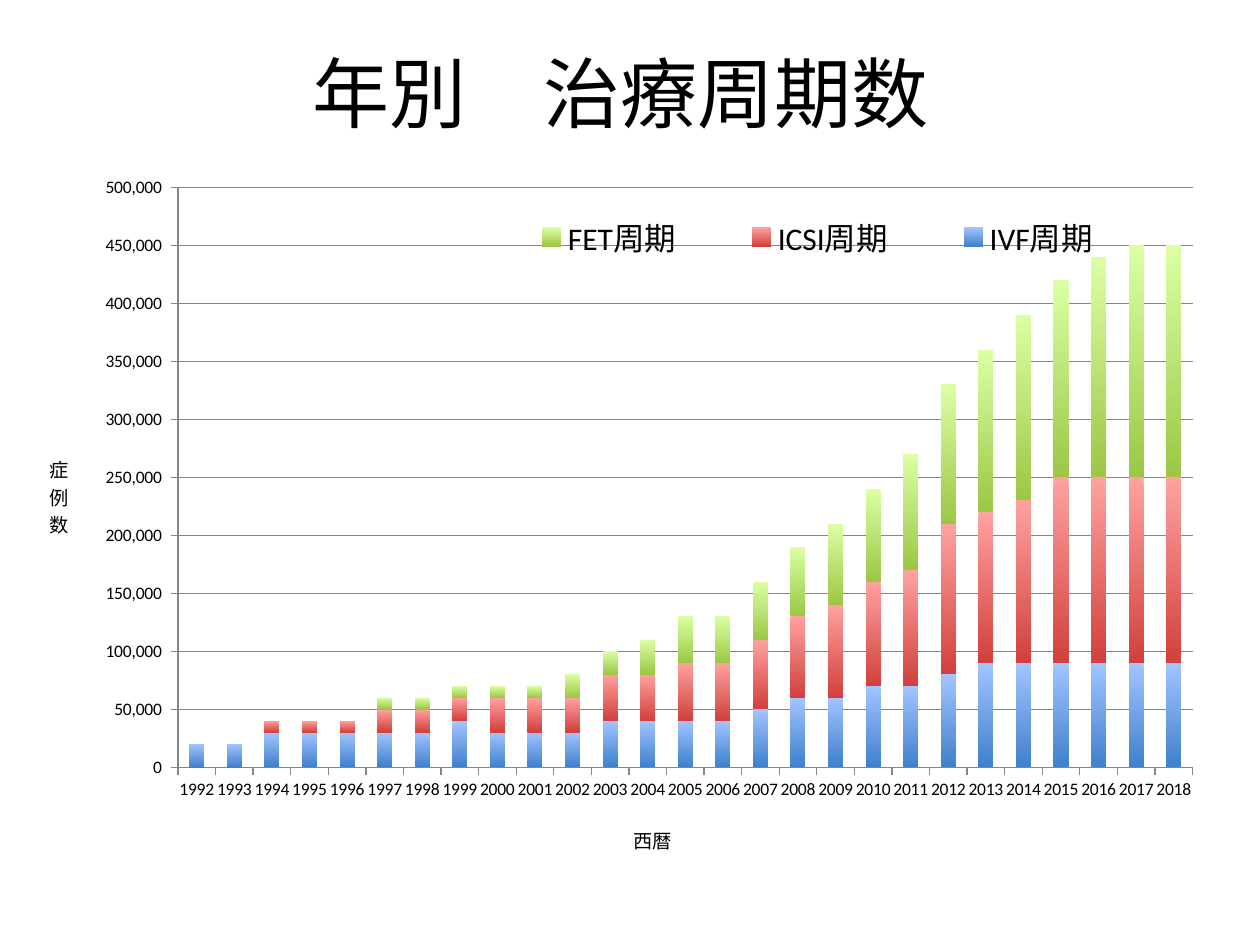
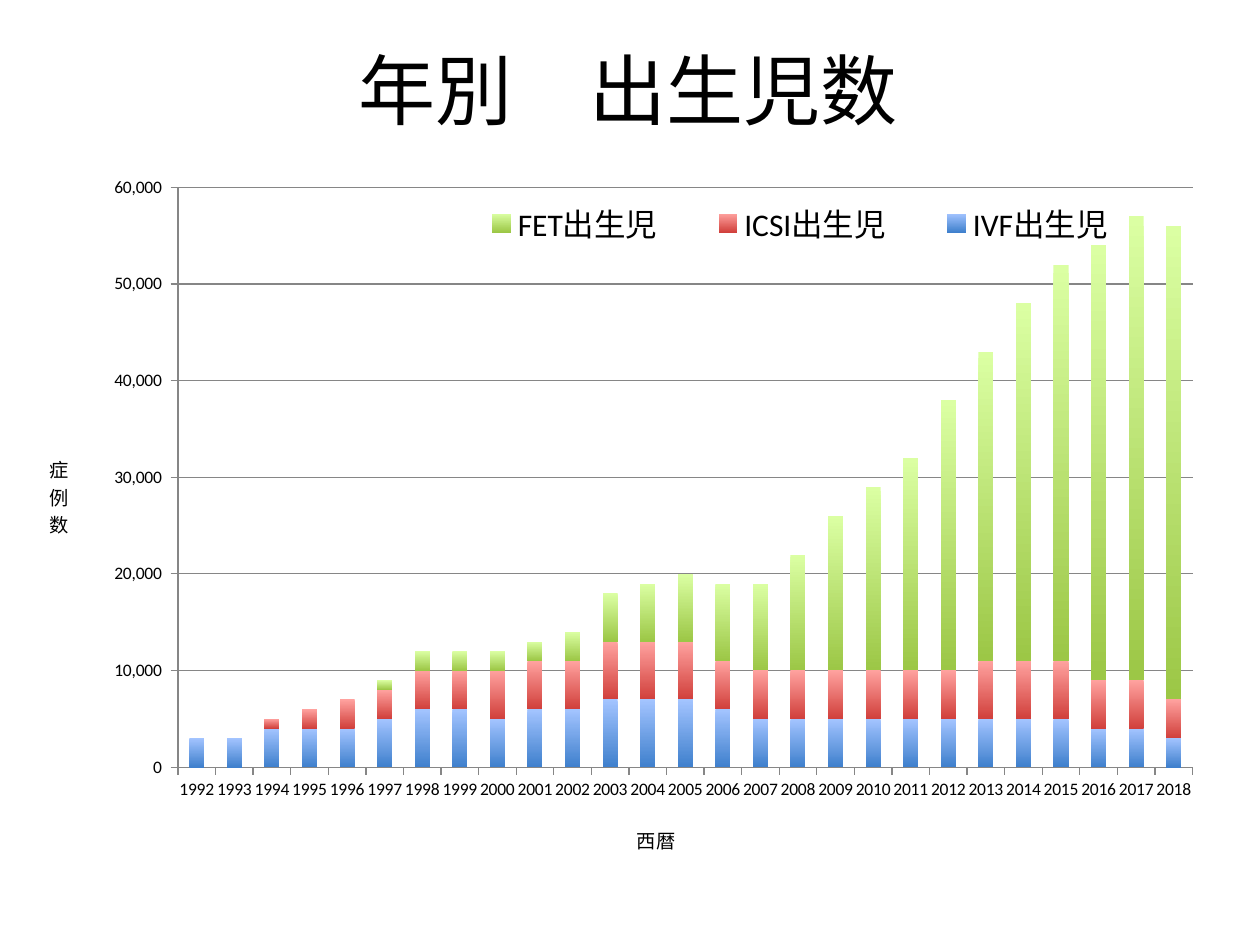
from lxml.etree import SubElement
from pptx import Presentation
from pptx.chart.data import CategoryChartData as Data
from pptx.dml.color import RGBColor
from pptx.enum.chart import XL_CHART_TYPE as Kind, XL_LEGEND_POSITION as Side, XL_TICK_MARK as Tick
from pptx.enum.text import MSO_ANCHOR as Anchor, PP_ALIGN as Align
from pptx.oxml import parse_xml
from pptx.oxml.ns import nsdecls, qn
from pptx.util import Cm, Pt

BLACK = RGBColor(0x00, 0x00, 0x00)
GRAY = RGBColor(0x86, 0x86, 0x86)
BLUE = RGBColor(0xA3, 0xC4, 0xFF), RGBColor(0x3F, 0x80, 0xCD)
RED = RGBColor(0xFF, 0xA2, 0x9F), RGBColor(0xD1, 0x40, 0x3C)
GREEN = RGBColor(0xDB, 0xFF, 0xA3), RGBColor(0x9C, 0xC7, 0x46)
SHADES = BLUE, RED, GREEN

HEAD_FONT = "Noto Sans CJK JP"
FONT = "Calibri"
FORMAT = r"#,##0_);[Red]\(#,##0\)"
YEARS = [str(year) for year in range(1992, 2019)]
PLOT = 0.116, 0.034, 0.863, 0.832

PAGES = [
    {
        "title": "年別　治療周期数",
        "spot": (1.09, 0.69),
        "unit": 10000,
        "top": 500000,
        "step": 50000,
        "legend": (0.37, 0.06, 0.58, 0.09),
        "label": 0.5,
        "series": {
            "IVF周期": [2, 2, 3, 3, 3, 3, 3, 4, 3, 3, 3, 4, 4, 4, 4, 5, 6, 6,
                      7, 7, 8, 9, 9, 9, 9, 9, 9],
            "ICSI周期": [0, 0, 1, 1, 1, 2, 2, 2, 3, 3, 3, 4, 4, 5, 5, 6, 7, 8,
                       9, 10, 13, 13, 14, 16, 16, 16, 16],
            "FET周期": [0, 0, 0, 0, 0, 1, 1, 1, 1, 1, 2, 2, 3, 4, 4, 5, 6, 7,
                      8, 10, 12, 14, 16, 17, 19, 20, 20],
        },
    },
    {
        "title": "年別　出生児数",
        "spot": (1.24, 0.64),
        "unit": 1000,
        "top": 60000,
        "step": 10000,
        "legend": (0.34, 0.04, 0.61, 0.09),
        "label": 0.503,
        "series": {
            "IVF出生児": [3, 3, 4, 4, 4, 5, 6, 6, 5, 6, 6, 7, 7, 7, 6, 5, 5, 5,
                       5, 5, 5, 5, 5, 5, 4, 4, 3],
            "ICSI出生児": [0, 0, 1, 2, 3, 3, 4, 4, 5, 5, 5, 6, 6, 6, 5, 5, 5, 5,
                        5, 5, 5, 6, 6, 6, 5, 5, 4],
            "FET出生児": [0, 0, 0, 0, 0, 1, 2, 2, 2, 2, 3, 5, 6, 7, 8, 9, 12, 16,
                       19, 22, 28, 32, 37, 41, 45, 48, 49],
        },
    },
]


def place(node, slot, box, inner=False):
    for old in node.findall(qn("c:layout")):
        node.remove(old)
    layout = parse_xml(f"<c:layout {nsdecls('c')}><c:manualLayout/></c:layout>")
    rules = [("layoutTarget", "inner")] if inner else []
    rules += [("xMode", "edge"), ("yMode", "edge"), *zip("xywh", box)]
    for tag, val in rules:
        SubElement(layout[0], qn(f"c:{tag}")).set("val", str(val))
    node.insert(slot, layout)


def set_head(slide, text, spot):
    head = slide.shapes.title
    head.left, head.top = map(Cm, spot)
    head.width, head.height = Cm(22.86), Cm(2.31)
    frame = head.text_frame
    frame.text = text
    frame.vertical_anchor = Anchor.MIDDLE
    para = frame.paragraphs[0]
    para.alignment = Align.CENTER
    font = para.runs[0].font
    font.name, font.size, font.color.rgb = HEAD_FONT, Pt(44), BLACK
    SubElement(font._element, qn("a:ea")).set("typeface", HEAD_FONT)


def set_axis(axis, text, spot):
    axis.major_tick_mark = Tick.OUTSIDE
    axis.minor_tick_mark = Tick.NONE
    axis.format.line.color.rgb = GRAY
    frame = axis.axis_title.text_frame
    frame.text = text
    font = frame.paragraphs[0].font
    font.name, font.size, font.bold, font.color.rgb = FONT, Pt(11), False, BLACK
    place(axis.axis_title._element, 1, spot)
    return frame


def add_bars(slide, page):
    data = Data(number_format=FORMAT)
    data.categories = YEARS
    for name, vals in page["series"].items():
        data.add_series(name, [val * page["unit"] for val in vals])
    frame = slide.shapes.add_chart(
        Kind.COLUMN_STACKED, Cm(0.84), Cm(3.3), Cm(23.7), Cm(14.05), data)
    chart = frame.chart
    chart.has_title = False
    font = chart.font
    font.name, font.size, font.color.rgb = FONT, Pt(10), BLACK
    place(chart._chartSpace.chart.plotArea, 0, PLOT, inner=True)

    plot = chart.plots[0]
    plot.gap_width, plot.overlap, plot.vary_by_categories = 150, 100, False
    for bars, shades in zip(plot.series, SHADES):
        fill = bars.format.fill
        fill.gradient()
        fill.gradient_angle = 270
        for stop, shade in zip(fill.gradient_stops, shades):
            stop.color.rgb = shade

    set_axis(chart.category_axis, "西暦", (page["label"], 0.942))
    axis = chart.value_axis
    body = set_axis(axis, "症例数", (0.004, 0.41))._element.bodyPr
    body.set("rot", "0")
    body.set("vert", "wordArtVertRtl")
    axis.minimum_scale, axis.maximum_scale = 0, page["top"]
    axis.major_unit = page["step"]
    axis.major_gridlines.format.line.color.rgb = GRAY
    axis.tick_labels.number_format = FORMAT
    axis.tick_labels.number_format_is_linked = False

    chart.has_legend = True
    legend = chart.legend
    legend.position = Side.RIGHT
    legend.include_in_layout = True
    font = legend.font
    font.name, font.size, font.color.rgb = FONT, Pt(18), BLACK
    place(legend._element, 1, page["legend"])


def main():
    deck = Presentation()
    deck.slide_width, deck.slide_height = Cm(25.4), Cm(19.05)
    for page in PAGES:
        slide = deck.slides.add_slide(deck.slide_layouts[5])
        set_head(slide, page["title"], page["spot"])
        add_bars(slide, page)
    deck.save("out.pptx")


if __name__ == "__main__":
    main()
